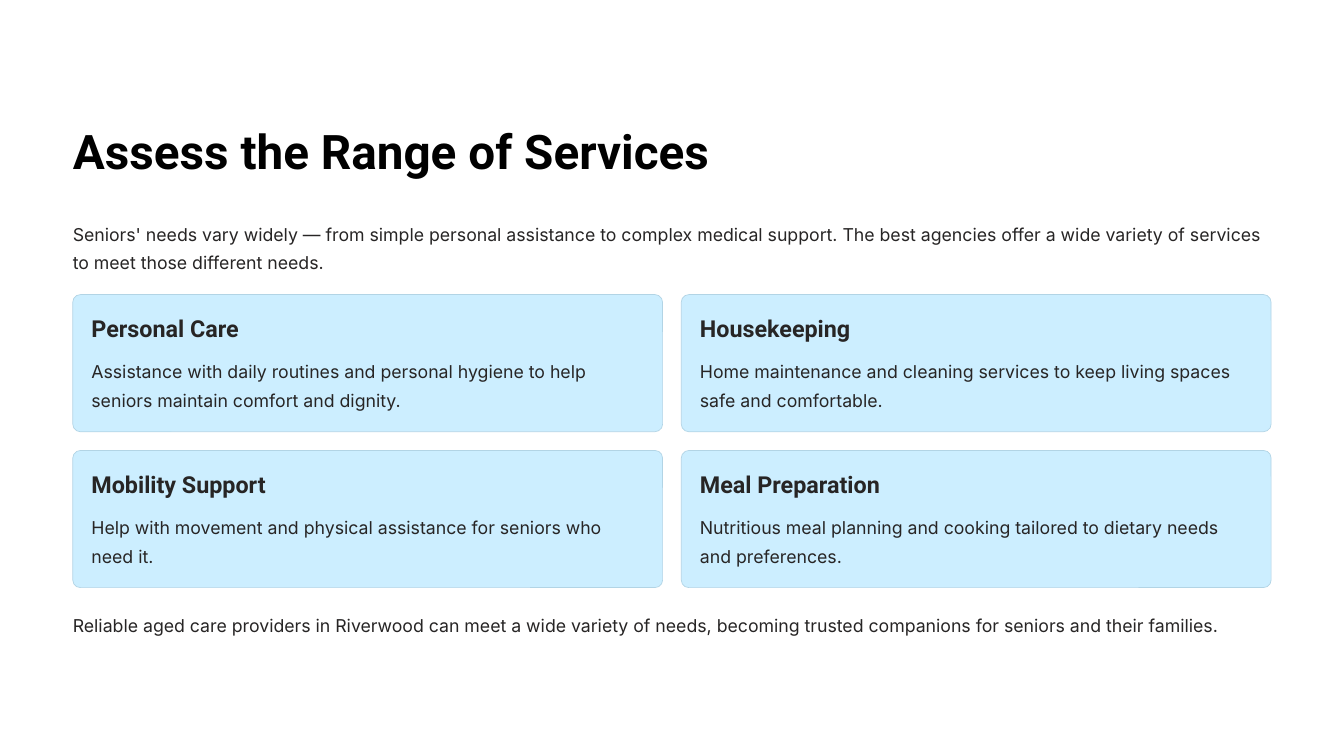
from pptx import Presentation
from pptx.dml.color import RGBColor
from pptx.enum.shapes import MSO_SHAPE
from pptx.enum.text import MSO_ANCHOR, MSO_AUTO_SIZE, PP_ALIGN
from pptx.util import Pt

TITLE = "Assess the Range of Services"
INTRO = ("Seniors' needs vary widely — from simple personal assistance to complex medical support. "
         "The best agencies offer a wide variety of services to meet those different needs.")
SERVICES = [
    ("Personal Care", "Assistance with daily routines and personal hygiene to help seniors maintain comfort and dignity."),
    ("Housekeeping", "Home maintenance and cleaning services to keep living spaces safe and comfortable."),
    ("Mobility Support", "Help with movement and physical assistance for seniors who need it."),
    ("Meal Preparation", "Nutritious meal planning and cooking tailored to dietary needs and preferences."),
]
CLOSING = ("Reliable aged care providers in Riverwood can meet a wide variety of needs, "
           "becoming trusted companions for seniors and their families.")

BLACK, INK, CARD_FILL, CARD_LINE = "000000", "272525", "CCEEFF", "B2D4E5"
HEADING_STYLE = dict(font="Roboto", bold=True, spacing=1.04, wrap=False)
BODY_STYLE = dict(font="Inter", bold=False, spacing=1.33, wrap=True)

LEFT, WIDTH, GAP, PADDING = 39, 642, 10, 10
COLUMNS = 2
CARDS_TOP, CARD_HEIGHT = 157.8, 73.5
CARD_WIDTH = (WIDTH - GAP * (COLUMNS - 1)) / COLUMNS


def color(hex_code):
    return RGBColor.from_string(hex_code)


def place(shape, left, top, width, height):
    shape.left, shape.top = Pt(left), Pt(top)
    shape.width, shape.height = Pt(width), Pt(height)


def write(shape, text, size, ink, font, bold, spacing, wrap):
    frame = shape.text_frame
    frame.text = text
    frame.margin_left = frame.margin_right = frame.margin_top = frame.margin_bottom = 0
    frame.word_wrap = wrap
    frame.auto_size = MSO_AUTO_SIZE.NONE
    frame.vertical_anchor = MSO_ANCHOR.TOP
    paragraph = frame.paragraphs[0]
    paragraph.alignment = PP_ALIGN.LEFT
    paragraph.line_spacing = spacing
    run_font = paragraph.runs[0].font
    run_font.name, run_font.size, run_font.bold = font, Pt(size), bold
    run_font.color.rgb = color(ink)


def add_text(slide, text, left, top, width, height, size, style):
    box = slide.shapes.add_textbox(Pt(left), Pt(top), Pt(width), Pt(height))
    write(box, text, size, INK, **style)


def add_card(slide, left, top, service, description):
    card = slide.shapes.add_shape(MSO_SHAPE.ROUNDED_RECTANGLE, Pt(left), Pt(top), Pt(CARD_WIDTH), Pt(CARD_HEIGHT))
    card.adjustments[0] = 0.056
    card.shadow.inherit = False
    card.fill.solid()
    card.fill.fore_color.rgb = color(CARD_FILL)
    card.line.color.rgb = color(CARD_LINE)
    card.line.width = Pt(0.38)
    text_left, text_width = left + PADDING, CARD_WIDTH - 2 * PADDING
    add_text(slide, service, text_left, top + PADDING, text_width, 16, 12.5, HEADING_STYLE)
    add_text(slide, description, text_left, top + 32, text_width, 31, 9.5, BODY_STYLE)


def main():
    deck = Presentation()
    deck.slide_width, deck.slide_height = Pt(720), Pt(405)
    slide = deck.slides.add_slide(deck.slide_layouts[5])

    title = slide.shapes.title
    place(title, LEFT, 64, WIDTH, 32)
    write(title, TITLE, 25.5, BLACK, **HEADING_STYLE)
    add_text(slide, INTRO, LEFT, 116, WIDTH, 31, 9.5, BODY_STYLE)

    for index, (service, description) in enumerate(SERVICES):
        row, column = divmod(index, COLUMNS)
        add_card(slide, LEFT + column * (CARD_WIDTH + GAP), CARDS_TOP + row * (CARD_HEIGHT + GAP), service, description)

    add_text(slide, CLOSING, LEFT, 325.6, WIDTH, 16, 9.5, BODY_STYLE)
    deck.save("out.pptx")


if __name__ == "__main__":
    main()
